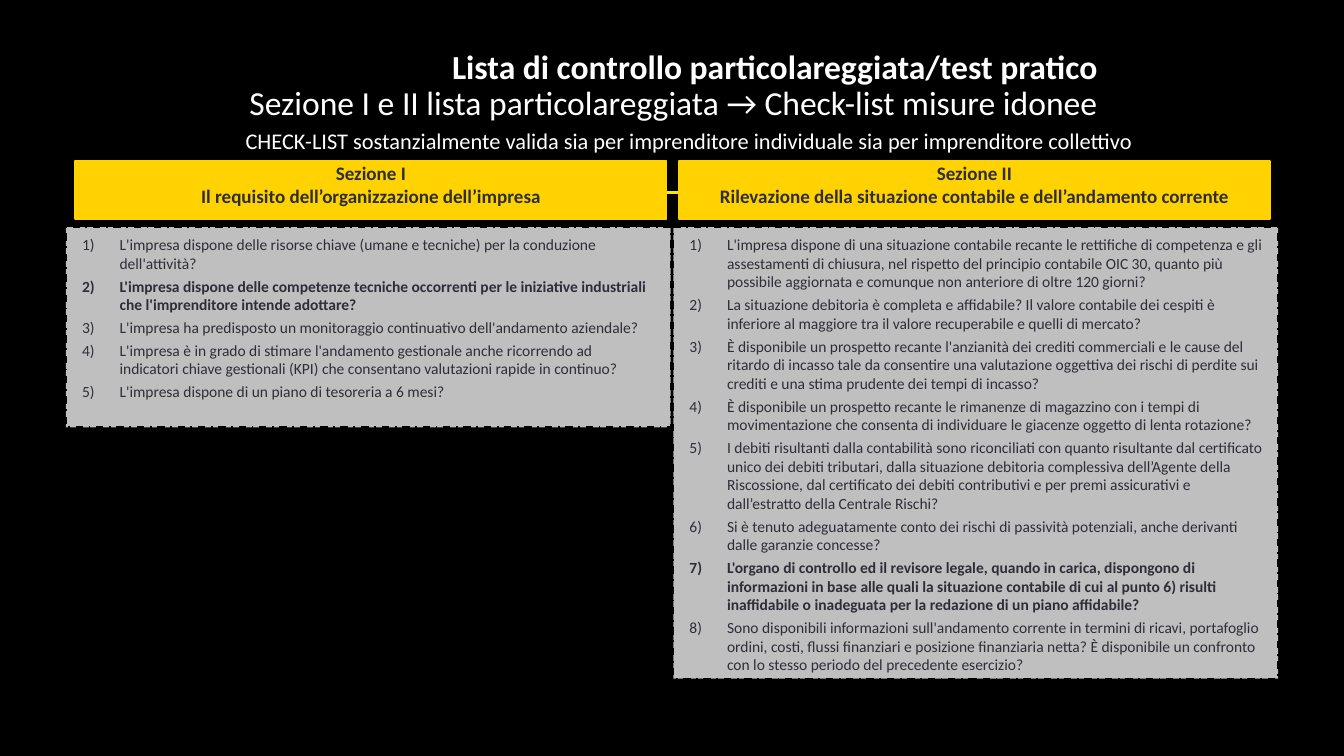
import copy

import pptx
import pptx.util
import pptx.dml.color
import pptx.enum.dml
import pptx.enum.shapes
import pptx.enum.text
import pptx.oxml.ns
import lxml.etree

Inches, Pt = pptx.util.Inches, pptx.util.Pt
ALIGN = pptx.enum.text.PP_ALIGN
ANCHOR = pptx.enum.text.MSO_ANCHOR

COLORS = {"back": "000000", "white": "FFFFFF", "gold": "FFD200",
          "rule": "FFE600", "ink": "2E2E38"}
FACE = "Calibri"

TITLE = [("Lista di controllo particolareggiata/test pratico", True),
         ("Sezione I e II lista particolareggiata → Check-list misure idonee", False)]
NOTE = ("CHECK-LIST sostanzialmente valida sia per imprenditore individuale "
        "sia per imprenditore collettivo")
PARTS = [
    {"head": ["Sezione I", "Il requisito dell’organizzazione dell’impresa"],
     "tall": 1.49, "bold": 2,
     "list": [
         "L'impresa dispone delle risorse chiave (umane e tecniche) per la conduzione dell'attività?",
         "L'impresa dispone delle competenze tecniche occorrenti per le iniziative industriali "
         "che l'imprenditore intende adottare?",
         "L'impresa ha predisposto un monitoraggio continuativo dell'andamento aziendale?",
         "L'impresa è in grado di stimare l'andamento gestionale anche ricorrendo ad indicatori "
         "chiave gestionali (KPI) che consentano valutazioni rapide in continuo?",
         "L'impresa dispone di un piano di tesoreria a 6 mesi?"]},
    {"head": ["Sezione II", "Rilevazione della situazione contabile e dell’andamento corrente"],
     "tall": 3.36, "bold": 7,
     "list": [
         "L'impresa dispone di una situazione contabile recante le rettifiche di competenza e gli "
         "assestamenti di chiusura, nel rispetto del principio contabile OIC 30, quanto più "
         "possibile aggiornata e comunque non anteriore di oltre 120 giorni?",
         "La situazione debitoria è completa e affidabile? Il valore contabile dei cespiti è "
         "inferiore al maggiore tra il valore recuperabile e quelli di mercato?",
         "È disponibile un prospetto recante l'anzianità dei crediti commerciali e le cause del "
         "ritardo di incasso tale da consentire una valutazione oggettiva dei rischi di perdite sui "
         "crediti e una stima prudente dei tempi di incasso?",
         "È disponibile un prospetto recante le rimanenze di magazzino con i tempi di "
         "movimentazione che consenta di individuare le giacenze oggetto di lenta rotazione?",
         "I debiti risultanti dalla contabilità sono riconciliati con quanto risultante dal "
         "certificato unico dei debiti tributari, dalla situazione debitoria complessiva "
         "dell’Agente della Riscossione, dal certificato dei debiti contributivi e per premi "
         "assicurativi e dall’estratto della Centrale Rischi?",
         "Si è tenuto adeguatamente conto dei rischi di passività potenziali, anche derivanti "
         "dalle garanzie concesse?",
         "L'organo di controllo ed il revisore legale, quando in carica, dispongono di "
         "informazioni in base alle quali la situazione contabile di cui al punto 6) risulti "
         "inaffidabile o inadeguata per la redazione di un piano affidabile?",
         "Sono disponibili informazioni sull'andamento corrente in termini di ricavi, portafoglio "
         "ordini, costi, flussi finanziari e posizione finanziaria netta? È disponibile un "
         "confronto con lo stesso periodo del precedente esercizio?"]},
]


def tint(name):
    return pptx.dml.color.RGBColor.from_string(COLORS[name])


def sub(node, tag, **attrs):
    return lxml.etree.SubElement(node, pptx.oxml.ns.qn(tag), attrs)


def place(shape, *box):
    shape.left, shape.top, shape.width, shape.height = map(Inches, box)


def frame(shape, insets, anchor):
    text = shape.text_frame
    text.word_wrap = True
    text.auto_size = pptx.enum.text.MSO_AUTO_SIZE.NONE
    text.vertical_anchor = anchor
    (text.margin_left, text.margin_top,
     text.margin_right, text.margin_bottom) = map(Inches, insets)
    return text


def paint(shape, fill, line):
    shape.fill.solid()
    shape.fill.fore_color.rgb = tint(fill)
    shape.line.color.rgb = tint(line)
    shape.line.width = Pt(1)


def para(text, index):
    return text.paragraphs[0] if index == 0 else text.add_paragraph()


def write(par, words, size, color, bold=False):
    run = par.add_run()
    run.text = words
    run.font.name, run.font.size, run.font.bold = FACE, Pt(size), bold
    run.font.color.rgb = tint(color)
    return run


def add_title(slide):
    shape = slide.shapes.title
    place(shape, -1.22, 0.35, 9.39, 0.59)
    par = frame(shape, (0, 0, 0, 0), ANCHOR.MIDDLE).paragraphs[0]
    par.alignment, par.line_spacing = ALIGN.RIGHT, 0.9
    for i, (words, bold) in enumerate(TITLE):
        if i:
            # The break takes the size of the line it ends
            par.add_line_break()
            par._p[-1].append(copy.deepcopy(run._r.rPr))
        run = write(par, words, 18, "white", bold)


def add_rule(slide):
    rule = slide.shapes.add_connector(
        pptx.enum.shapes.MSO_CONNECTOR.STRAIGHT,
        Inches(1.47), Inches(1.43), Inches(8.55), Inches(1.43))
    rule.line.color.rgb = tint("rule")
    rule.line.width = Pt(1.5)
    sub(rule._element.spPr, "a:effectLst")


def add_note(slide):
    box = slide.shapes.add_textbox(*map(Inches, (0.75, 0.9, 8.76, 0.3)))
    par = frame(box, (0.1, 0.05, 0.1, 0.05), ANCHOR.TOP).paragraphs[0]
    par.alignment = ALIGN.CENTER
    write(par, NOTE, 12, "white")


def add_list(shape, part, left):
    place(shape, left, 1.69, 4.5, part["tall"])
    paint(shape, "white", "back")
    shape.line.dash_style = pptx.enum.dml.MSO_LINE.DASH_DOT
    tone = shape._element.spPr.find(".//" + pptx.oxml.ns.qn("a:srgbClr"))
    sub(tone, "a:alpha", val="75000")
    text = frame(shape, (0.12, 0.06, 0.12, 0.06), ANCHOR.TOP)
    for i, words in enumerate(part["list"]):
        par = para(text, i)
        props = par._p.get_or_add_pPr()
        props.set("marL", str(Inches(0.28)))
        props.set("indent", str(Inches(-0.28)))
        sub(props, "a:buFont", typeface=FACE)
        sub(props, "a:buAutoNum", type="arabicParenR")
        par.alignment, par.line_spacing = ALIGN.LEFT, 1.0
        par.space_before, par.space_after = Pt(0), Pt(2.2)
        write(par, words, 8.3, "ink", i + 1 == part["bold"])


def add_head(slide, part, left):
    shape = slide.shapes.add_shape(
        pptx.enum.shapes.MSO_SHAPE.RECTANGLE,
        *map(Inches, (left, 1.2, 4.4, 0.43)))
    shape.shadow.inherit = False
    paint(shape, "gold", "gold")
    text = frame(shape, (0.07, 0.32, 0.07, 0.41), ANCHOR.MIDDLE)
    for i, words in enumerate(part["head"]):
        par = para(text, i)
        par.alignment = ALIGN.CENTER
        write(par, words, 10.2, "ink", True)


def main():
    deck = pptx.Presentation()
    deck.slide_width = Inches(10)
    deck.slide_height = deck.slide_width * 9 // 16
    slide = deck.slides.add_slide(deck.slide_layouts.get_by_name("Two Content"))
    slide.background.fill.solid()
    slide.background.fill.fore_color.rgb = tint("back")
    add_title(slide)
    add_rule(slide)
    add_note(slide)
    for i, part in enumerate(PARTS):
        add_list(slide.placeholders[i + 1], part, 0.49 + 4.52 * i)
        add_head(slide, part, 0.56 + 4.49 * i)
    deck.save("out.pptx")


if __name__ == "__main__":
    main()
